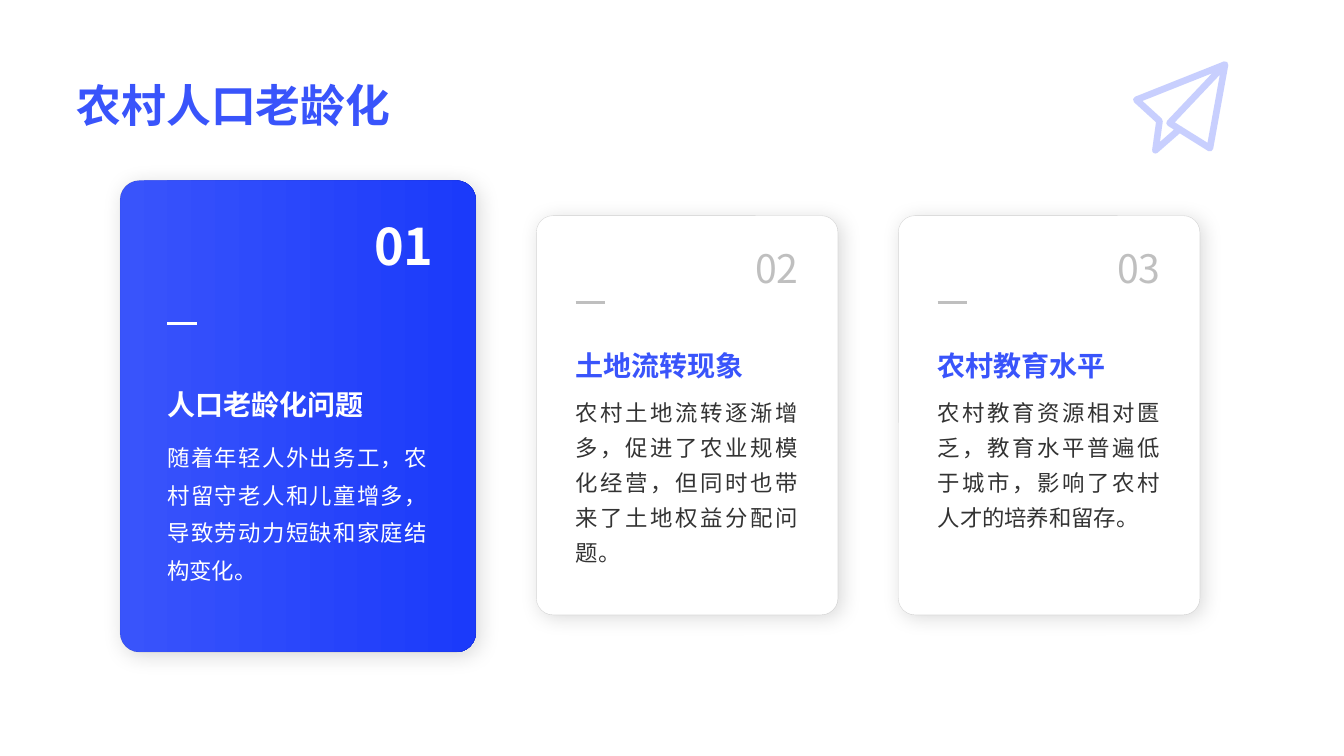
from dataclasses import dataclass

from lxml import etree
from pptx import Presentation
from pptx.dml.color import RGBColor
from pptx.enum import shapes, text
from pptx.oxml import parse_xml
from pptx.oxml.ns import nsdecls, qn
from pptx.util import Inches, Pt


@dataclass(frozen=True)
class Theme:
    blue: str = "3954FB"
    deep_blue: str = "1B3AFA"
    pale_blue: str = "8898FD"
    white: str = "FFFFFF"
    black: str = "000000"
    grey: str = "BFBFBF"
    ink: str = "333333"
    title_font: str = "Arial"
    font: str = "Noto Sans CJK SC"
    title_size: int = 32
    heading_size: int = 20
    body_size: int = 16


@dataclass(frozen=True)
class CardStyle:
    top: float
    width: float
    height: float
    margin: float
    text_width: float
    number_box: tuple
    number_size: int
    dash_top: float
    heading_box: tuple
    body_box: tuple
    spacing: float
    accent: str
    heading_color: str
    body_color: str
    featured: bool = False


THEME = Theme()
FEATURED = CardStyle(
    top=1.79, width=3.53, height=4.68, margin=0.47, text_width=2.58,
    number_box=(2.22, 2.13, 0.89, 0.68), number_size=36, dash_top=3.21,
    heading_box=(3.3, 0.88), body_box=(4.3, 1.95), spacing=1.4,
    accent=THEME.white, heading_color=THEME.white, body_color=THEME.white,
    featured=True)
PLAIN = CardStyle(
    top=2.14, width=2.99, height=3.96, margin=0.39, text_width=2.21,
    number_box=(1.71, 2.42, 0.89, 0.59), number_size=28, dash_top=3,
    heading_box=(3.23, 0.56), body_box=(3.88, 2.06), spacing=1.3,
    accent=THEME.grey, heading_color=THEME.blue, body_color=THEME.ink)
CARDS = [
    (1.19, FEATURED, "人口老龄化问题",
     "随着年轻人外出务工，农村留守老人和儿童增多，导致劳动力短缺和家庭结构变化。"),
    (5.32, PLAIN, "土地流转现象",
     "农村土地流转逐渐增多，促进了农业规模化经营，但同时也带来了土地权益分配问题。"),
    (8.91, PLAIN, "农村教育水平",
     "农村教育资源相对匮乏，教育水平普遍低于城市，影响了农村人才的培养和留存。"),
]
PLANE = [(12.14, 0.65), (11.6, 1.22), (12, 1.47), (12.15, 0.64),
         (11.27, 0.99), (11.5, 1.2), (11.46, 1.49), (11.7, 1.28)]


def rgb(color):
    return RGBColor.from_string(color)


def set_line(shape, color, width, opacity=100):
    shape.line.color.rgb = rgb(color)
    shape.line.width = Pt(width)
    if opacity < 100:
        tint = shape.line.fill._xPr.find(".//" + qn("a:srgbClr"))
        etree.SubElement(tint, qn("a:alpha"), val=str(opacity * 1000))


def add_text(page, area, words, size, color, bold=False, font=THEME.font,
             align=text.PP_ALIGN.JUSTIFY, anchor=text.MSO_ANCHOR.TOP,
             spacing=None, wrap=True):
    box = page.shapes.add_textbox(*map(Inches, area))
    frame = box.text_frame
    frame.margin_left = frame.margin_right = 0
    frame.margin_top = frame.margin_bottom = 0
    frame.word_wrap = wrap
    frame.vertical_anchor = anchor
    para = frame.paragraphs[0]
    para.text = words
    para.alignment = align
    if spacing:
        para.line_spacing = spacing
    para.font.name = font
    para.font.size = Pt(size)
    para.font.bold = bold
    para.font.color.rgb = rgb(color)
    latin = para._p.find(".//" + qn("a:latin"))
    latin.addnext(parse_xml(f'<a:ea {nsdecls("a")} typeface="{THEME.font}"/>'))


def add_panel(page, left, style):
    panel = page.shapes.add_shape(
        shapes.MSO_SHAPE.ROUNDED_RECTANGLE,
        *map(Inches, (left, style.top, style.width, style.height)))
    panel.adjustments[0] = 0.055
    if style.featured:
        panel.fill.gradient()
        panel.fill.gradient_angle = 0
        for stop, color in zip(panel.fill.gradient_stops,
                               (THEME.blue, THEME.deep_blue)):
            stop.color.rgb = rgb(color)
    else:
        panel.fill.solid()
        panel.fill.fore_color.rgb = rgb(THEME.white)
    set_line(panel, THEME.black, 0.25, 15)
    panel.shadow.inherit = False
    effects = panel._element.spPr.find(qn("a:effectLst"))
    effects.append(parse_xml(
        f'<a:outerShdw {nsdecls("a")} blurRad="{Pt(15)}" dist="{Pt(3)}" '
        f'dir="2700000" algn="tl" rotWithShape="0">'
        f'<a:srgbClr val="{THEME.black}"><a:alpha val="15000"/></a:srgbClr>'
        f'</a:outerShdw>'))


def add_dash(page, left, top, color):
    dash = page.shapes.add_connector(
        shapes.MSO_CONNECTOR.STRAIGHT,
        *map(Inches, (left, top, left + 0.29, top)))
    set_line(dash, color, 2.25)
    etree.SubElement(dash._element.spPr, qn("a:effectLst"))


def add_card(page, number, left, style, heading, body):
    inner = left + style.margin
    add_panel(page, left, style)
    offset, *rest = style.number_box
    add_text(page, (left + offset, *rest), f"{number:02}", style.number_size,
             style.accent, bold=style.featured, align=text.PP_ALIGN.RIGHT,
             wrap=False)
    add_dash(page, inner, style.dash_top, style.accent)
    top, height = style.heading_box
    add_text(page, (inner, top, style.text_width, height), heading,
             THEME.heading_size, style.heading_color, bold=True,
             anchor=text.MSO_ANCHOR.BOTTOM)
    top, height = style.body_box
    add_text(page, (inner, top, style.text_width, height), body,
             THEME.body_size, style.body_color, spacing=style.spacing)


def add_paper_plane(page):
    start, *points = [(Inches(x), Inches(y)) for x, y in PLANE]
    builder = page.shapes.build_freeform(*start)
    builder.add_line_segments(points, close=False)
    plane = builder.convert_to_shape()
    plane.fill.background()
    plane.shadow.inherit = False
    set_line(plane, THEME.pale_blue, 4.75, 46)
    outline = plane.line.fill._xPr
    outline.set("cap", "rnd")
    etree.SubElement(outline, qn("a:round"))


def main():
    deck = Presentation()
    deck.slide_width = Inches(13.33)
    deck.slide_height = Inches(7.5)
    page = deck.slides.add_slide(deck.slide_layouts[6])
    add_paper_plane(page)
    add_text(page, (0.76, 0.43, 11.81, 0.87), "农村人口老龄化",
             THEME.title_size, THEME.blue, bold=True, font=THEME.title_font,
             align=text.PP_ALIGN.LEFT, anchor=text.MSO_ANCHOR.BOTTOM)
    for number, card in enumerate(CARDS, 1):
        add_card(page, number, *card)
    deck.save("out.pptx")


if __name__ == "__main__":
    main()
